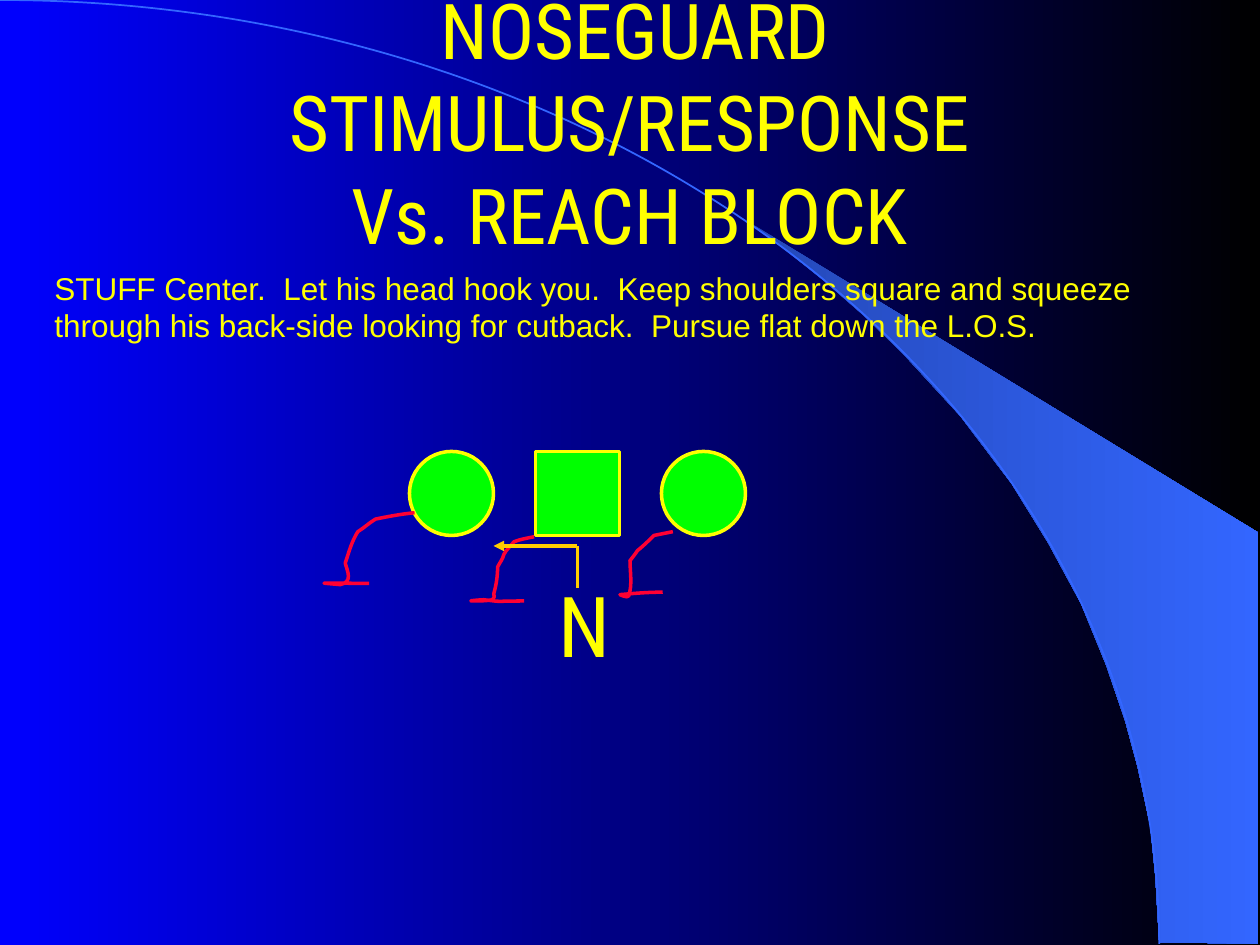
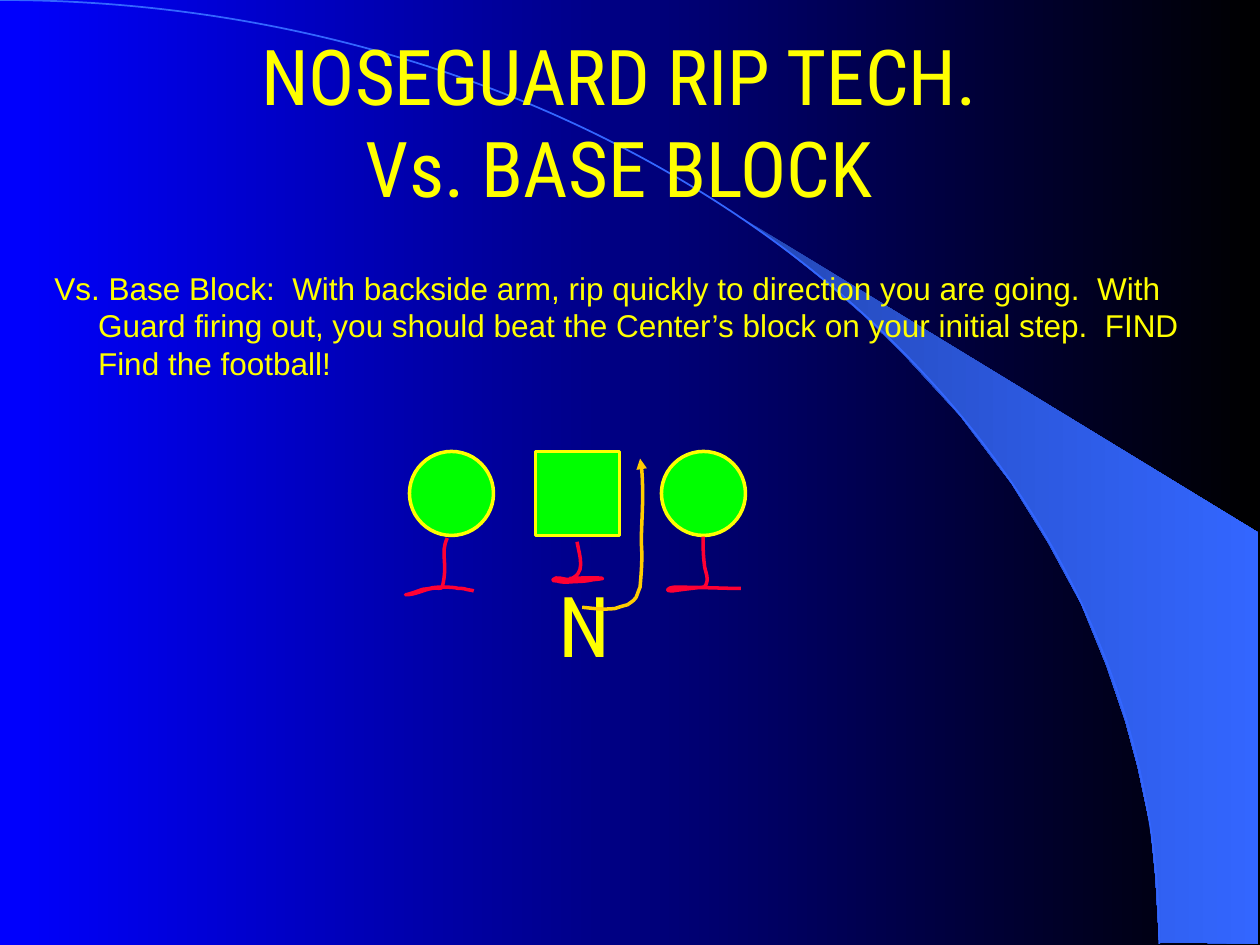
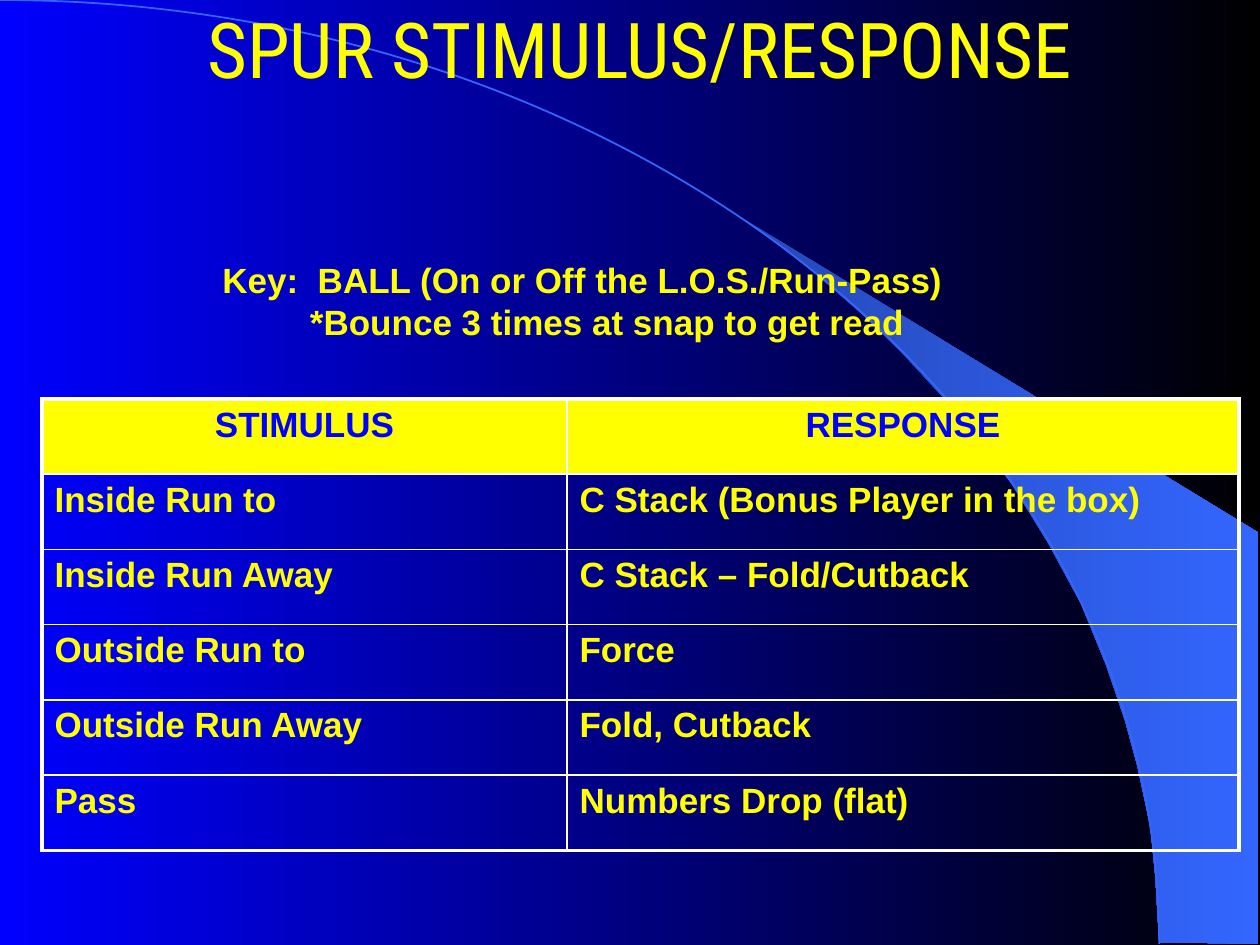
from dataclasses import dataclass

from lxml.etree import SubElement
from pptx import Presentation
from pptx.dml.color import RGBColor as Rgb
from pptx.enum.shapes import MSO_CONNECTOR as Connector, MSO_SHAPE as Preset
from pptx.enum.text import MSO_ANCHOR as Anchor, PP_ALIGN as Align
from pptx.oxml.ns import qn
from pptx.util import Inches, Pt

COLUMNS, ROWS = 100, 75


@dataclass(frozen=True)
class Theme:
    blue: str = "0000FF"
    black: str = "000000"
    wing: str = "3366FF"
    wing_shade: int = 46275
    text: str = "FFFF00"
    player: str = "00FF00"
    block: str = "FF0033"
    nose_route: str = "FFCC00"
    border: str = "FFFFFF"
    heading_font: str = "Roboto Condensed"
    body_font: str = "Arial"
    title_size: int = 44
    lead_size: int = 28
    letter_size: int = 48
    body_size: int = 18
    table_size: int = 20
    stroke: float = 2
    thin: float = 1
    frame: float = 2.25


class Deck:
    def __init__(self, theme):
        self.theme = theme
        self.prs = Presentation()
        self.prs.slide_width, self.prs.slide_height = Inches(10), Inches(7.5)
        self.cell_w = self.prs.slide_width / COLUMNS
        self.cell_h = self.prs.slide_height / ROWS
        self.slide = None

    def at(self, *lengths):
        """Turn alternating columns and rows into slide lengths."""
        return [round(n * (self.cell_h if i % 2 else self.cell_w))
                for i, n in enumerate(lengths)]

    def new_slide(self):
        self.slide = self.prs.slides.add_slide(self.prs.slide_layouts[6])

    def gradient(self, fill, *colors):
        fill.gradient()
        fill.gradient_angle = 0
        for stop, color in zip(fill.gradient_stops, colors):
            stop.color.rgb = Rgb.from_string(color)

    def stroke(self, shape, color, width, arrow=False):
        shape.line.color.rgb = Rgb.from_string(color)
        shape.line.width = Pt(width)
        if arrow:
            SubElement(shape.element.spPr.find(qn("a:ln")), qn("a:tailEnd"), type="triangle")

    def outline(self, points, closed=False):
        corners = [self.at(*point) for point in points]
        builder = self.slide.shapes.build_freeform(*corners[0], scale=1.0)
        builder.add_line_segments(corners[1:], close=closed)
        shape = builder.convert_to_shape()
        shape.shadow.inherit = False
        return shape

    def curve(self, anchors, color, width=None, arrow=False):
        """Draw cubic curves given as a start followed by triples of points."""
        shape = self.outline(anchors)
        track = next(shape.element.iter(qn("a:path")))
        segments = track.findall(qn("a:lnTo"))
        for i in range(0, len(segments), 3):
            bend = SubElement(track, qn("a:cubicBezTo"))
            for segment in segments[i:i + 3]:
                bend.append(segment[0])
                track.remove(segment)
        shape.fill.background()
        self.stroke(shape, color, width or self.theme.stroke, arrow)
        return shape

    def move_to_master(self, *shapes):
        master_tree = self.prs.slide_master.shapes.element
        for i, shape in enumerate(shapes):
            shape.element.nvSpPr.cNvPr.id = 100 + i
            master_tree.insert(2 + i, shape.element)

    def backdrop(self):
        """Give the master its gradient, wing and arc; needs a current slide."""
        look = self.theme
        self.gradient(self.prs.slide_master.background.fill, look.blue, look.black)
        wing = self.outline(WING, closed=True)
        self.gradient(wing.fill, look.wing, look.wing)
        first_color = next(wing.element.spPr.iter(qn("a:srgbClr")))
        SubElement(first_color, qn("a:shade"), val=str(look.wing_shade))
        wing.line.fill.background()
        self.move_to_master(wing, self.curve(ARC, look.wing, look.thin))

    def run(self, paragraph, text, font, size, color, bold=False):
        run = paragraph.add_run()
        run.text = text
        run.font.name, run.font.size, run.font.bold = font, Pt(size), bold
        run.font.color.rgb = Rgb.from_string(color)

    def frame(self, box):
        frame = self.slide.shapes.add_textbox(*self.at(*box)).text_frame
        frame.word_wrap = True
        return frame

    def title(self, box, *lines, lead=""):
        """Centre the lines, after an optional smaller lead."""
        look = self.theme
        frame = self.frame(box)
        frame.vertical_anchor = Anchor.MIDDLE
        paragraph = frame.paragraphs[0]
        paragraph.alignment = Align.CENTER
        if lead:
            self.run(paragraph, lead, look.heading_font, look.lead_size, look.text)
        for i, line in enumerate(lines):
            if i:
                paragraph.add_line_break()
            self.run(paragraph, line, look.heading_font, look.title_size, look.text)

    def body(self, box, *lines, indent=0, size=None, bold=False):
        """Write one paragraph a line, indenting all but the first."""
        frame = self.frame(box)
        for i, line in enumerate(lines):
            paragraph = frame.add_paragraph() if i else frame.paragraphs[0]
            self.run(paragraph, line, self.theme.body_font, size or self.theme.body_size,
                     self.theme.text, bold)
            if i:
                paragraph._p.get_or_add_pPr().set("marL", str(self.at(indent)[0]))

    def player(self, preset, column):
        shape = self.slide.shapes.add_shape(preset, *self.at(column, 35.83, 6.67, 6.67))
        shape.shadow.inherit = False
        shape.fill.solid()
        shape.fill.fore_color.rgb = Rgb.from_string(self.theme.player)
        self.stroke(shape, self.theme.text, self.theme.stroke)

    def formation(self):
        for i, preset in enumerate((Preset.OVAL, Preset.RECTANGLE, Preset.OVAL)):
            self.player(preset, 32.5 + 10 * i)
        nose = self.frame((43.33, 45, 5.6, 9)).paragraphs[0]
        self.run(nose, "N", self.theme.heading_font, self.theme.letter_size, self.theme.text)

    def blocks(self, routes):
        for route in routes:
            self.curve(route, self.theme.block)

    def line(self, start, end, arrow=False):
        line = self.slide.shapes.add_connector(Connector.STRAIGHT, *self.at(*start, *end))
        self.stroke(line, self.theme.nose_route, self.theme.stroke, arrow)
        SubElement(line.element.spPr, qn("a:effectLst"))

    def borders(self, cell, widths):
        """Draw the left, right, top and bottom edges in that order."""
        props = cell._tc.get_or_add_tcPr()
        for i, (side, width) in enumerate(zip("LRTB", widths)):
            edge = SubElement(props, qn(f"a:ln{side}"), w=str(Pt(width)))
            fill = SubElement(edge, qn("a:solidFill"))
            SubElement(fill, qn("a:srgbClr"), val=self.theme.border)
            props.insert(i, edge)

    def table(self, left, top, widths, row_height, rows):
        look = self.theme
        box = self.at(left, top, sum(widths), row_height * len(rows))
        table = self.slide.shapes.add_table(len(rows), len(widths), *box).table
        table.first_row = table.horz_banding = False
        for column, width in zip(table.columns, widths):
            column.width = self.at(width)[0]
        for r, texts in enumerate(rows):
            table.rows[r].height = self.at(0, row_height)[1]
            for c, text in enumerate(texts):
                cell, header = table.cell(r, c), r == 0
                paragraph = cell.text_frame.paragraphs[0]
                self.run(paragraph, text, look.body_font, look.table_size,
                         look.blue if header else look.text, bold=True)
                if header:
                    paragraph.alignment = Align.CENTER
                    cell.fill.solid()
                    cell.fill.fore_color.rgb = Rgb.from_string(look.text)
                else:
                    cell.fill.background()
                on_frame = (c == 0, c == len(widths) - 1, r == 0, r == len(rows) - 1)
                self.borders(cell, [look.frame if edge else look.thin for edge in on_frame])


ARC = [(0, 0), (50.8, 0), (92, 33.5), (92, 74.9)]
WING = [(92, 74.8), (99.9, 74.9), (99.9, 42.3), (58.9, 17.3), (62.4, 19.9), (65.3, 22.2),
        (68.5, 25), (71.6, 28), (76.2, 33), (80.3, 38.4), (83.2, 43.1), (85.8, 47.9),
        (87.8, 52.8), (89.3, 57.2), (90.3, 60.9), (91.3, 65.6), (91.7, 69.6)]

REACH_BLOCKS = [
    [(32.9, 40.7), (31.8, 40.8), (30.8, 41), (29.8, 41.2), (29.3, 41.5), (28.9, 41.9),
     (28.4, 42.2), (27.9, 43), (27.7, 43.8), (27.4, 44.7), (27.6, 45.4), (28, 46.2),
     (27, 46.4), (24.7, 46.2), (25.5, 46.3), (29.3, 46.3)],
    [(42.4, 42.6), (41.9, 42.7), (41.3, 42.8), (40.8, 43), (40.5, 43.4), (40.2, 43.6),
     (40, 44), (39.9, 44.4), (39.7, 44.6), (39.5, 45), (39.5, 45.7), (39.4, 46.4),
     (39.2, 47.1), (39.2, 47.3), (39.3, 47.5), (39.1, 47.6), (38.6, 47.7), (38, 47.7),
     (37.4, 47.7), (37.1, 47.7), (38.1, 47.6), (38.4, 47.6), (40.1, 47.8), (39.1, 47.7),
     (41.6, 47.7)],
    [(53.4, 42.2), (52.9, 42.3), (52.4, 42.4), (51.9, 42.5), (51.5, 42.9), (51.1, 43.3),
     (50.6, 43.7), (50.4, 44), (50, 44.5), (50, 44.5), (50, 45.4), (50.2, 46.4),
     (49.9, 47.3), (49.8, 47.5), (49.2, 47.2), (49.2, 47.2), (50.3, 47.1), (51.4, 47),
     (52.6, 47)],
]
BASE_BLOCKS = [
    [(45.8, 43), (46, 44.2), (46.6, 45.6), (45.1, 46), (44.8, 46), (44.1, 45.7),
     (43.9, 46), (43.8, 46.1), (44.1, 46.1), (44.2, 46.1), (44.5, 46.2), (44.7, 46.2),
     (45, 46.2), (46.3, 46.1), (46.1, 46.2), (47.1, 46), (47.3, 46), (48, 45.9),
     (47.8, 45.9), (46.9, 45.8), (46.1, 45.9), (45.2, 45.9)],
    [(35.5, 42.7), (34.9, 44), (35.6, 44.6), (35.1, 46.6), (35, 46.8), (34.6, 46.6),
     (34.3, 46.7), (33.6, 46.8), (33, 47.2), (32.2, 47.2), (32.1, 47.2), (32.4, 47.2),
     (32.6, 47.1), (32.7, 47.1), (32.8, 47), (32.9, 47), (33, 47), (33.1, 46.9),
     (33.2, 46.9), (33.7, 46.7), (33.5, 46.8), (34.1, 46.7), (34.4, 46.6), (34.8, 46.6),
     (35.1, 46.6), (35.6, 46.6), (36, 46.6), (36.4, 46.7), (36.7, 46.7), (36.9, 46.7),
     (37.1, 46.8), (37.3, 46.8), (37.6, 46.9), (37.6, 46.9)],
    [(55.8, 42.6), (55.8, 43.3), (55.8, 44), (55.9, 44.8), (55.9, 45.3), (56.4, 46),
     (55.9, 46.6), (55.8, 46.6), (54, 46.8), (53.4, 46.9), (53.3, 46.9), (52.9, 46.9),
     (53, 46.8), (53.1, 46.6), (53.7, 46.6), (53.7, 46.6), (58.7, 46.7), (57, 46.7),
     (58.8, 46.7)],
]
RIP_ROUTE = [
    (46.2, 48.2), (47.2, 48.3), (47.8, 48.4), (48.8, 48.3), (49.1, 48.2), (49.4, 48.1),
    (49.8, 48), (50.7, 47.4), (50.4, 47.5), (50.8, 46.6), (50.9, 45.4), (51, 44.3),
    (50.9, 43.1), (50.9, 41.9), (51, 40.7), (51, 39.5), (51, 38.7), (51, 37.8),
    (50.9, 37), (50.9, 36.8), (50.8, 36.4), (50.8, 36.4)]
SPUR_READS = [
    ("STIMULUS", "RESPONSE"),
    ("Inside Run to", "C Stack (Bonus Player in the box)"),
    ("Inside Run Away", "C Stack – Fold/Cutback"),
    ("Outside Run to", "Force"),
    ("Outside Run Away", "Fold, Cutback"),
    ("Pass", "Numbers Drop (flat)"),
]


def reach_block_slide(deck):
    deck.title((7.5, 0, 85, 19.2), "NOSEGUARD STIMULUS/RESPONSE", "Vs. REACH BLOCK", lead=" ")
    deck.body((3.33, 20.83, 92.5, 7),
              "STUFF Center.  Let his head hook you.  Keep shoulders square and squeeze "
              "through his back-side looking for cutback.  Pursue flat down the L.O.S.")
    deck.formation()
    deck.blocks(REACH_BLOCKS)
    turn = (45.83, 43.33)
    deck.line((45.83, 46.67), turn)
    deck.line(turn, (39.17, 43.33), arrow=True)


def base_block_slide(deck):
    deck.title((6.67, 3.33, 85, 12.5), "NOSEGUARD RIP TECH.", "Vs. BASE BLOCK")
    deck.body((3.33, 20.83, 91.9, 10),
              "Vs. Base Block:  With backside arm, rip quickly to direction you are going.  With",
              "Guard firing out, you should beat the Center’s block on your initial step.  FIND",
              "Find the football!", indent=3.47)
    deck.formation()
    deck.blocks(BASE_BLOCKS)
    deck.curve(RIP_ROUTE, deck.theme.nose_route, arrow=True)


def spur_slide(deck):
    deck.title((8.33, 0, 85, 7.5), "SPUR STIMULUS/RESPONSE")
    deck.table(3.33, 31.67, (41.67, 53.33), 5.97, SPUR_READS)
    deck.body((16.67, 20, 66.67, 7.7), "Key:  BALL (On or Off the L.O.S./Run-Pass)",
              "*Bounce 3 times at snap to get read",
              indent=6.95, size=deck.theme.table_size, bold=True)


def main():
    deck = Deck(Theme())
    for i, build in enumerate((reach_block_slide, base_block_slide, spur_slide)):
        deck.new_slide()
        if i == 0:
            deck.backdrop()
        build(deck)
    deck.prs.save("out.pptx")


if __name__ == "__main__":
    main()
